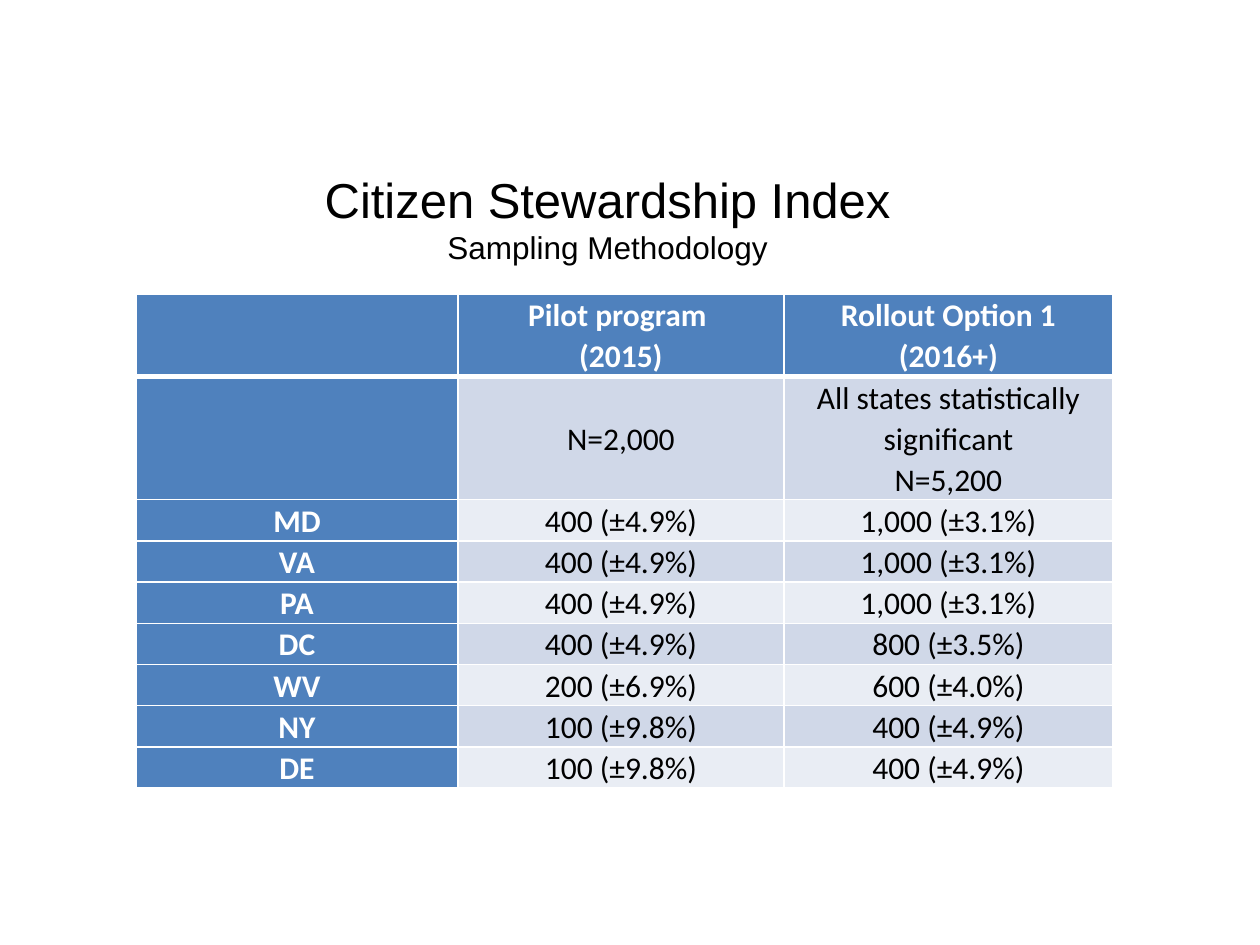
from pptx import Presentation
from pptx.dml.color import RGBColor
from pptx.enum.text import MSO_ANCHOR as Anchor, MSO_AUTO_SIZE as AutoSize, PP_ALIGN as Align
from pptx.oxml import parse_xml
from pptx.oxml.ns import nsdecls
from pptx.util import Pt

PX = 914400 // 126
COLORS = {
    "accent": "4F81BD",
    "dark band": "D0D8E8",
    "light band": "E9EDF4",
    "white": "FFFFFF",
    "black": "000000",
}
COLUMN_WIDTHS = [322, 326, 329]
ROW_HEIGHT = 39
SAMPLE_ROWS = [
    ["", "Pilot program \n(2015)", "Rollout Option 1 (2016+)"],
    ["", "N=2,000", "All states statistically significant\nN=5,200"],
    ["MD", "400 (±4.9%)", "1,000 (±3.1%)"],
    ["VA", "400 (±4.9%)", "1,000 (±3.1%)"],
    ["PA", "400 (±4.9%)", "1,000 (±3.1%)"],
    ["DC", "400 (±4.9%)", "800 (±3.5%)"],
    ["WV", "200 (±6.9%)", "600 (±4.0%)"],
    ["NY", "100 (±9.8%)", "400 (±4.9%)"],
    ["DE", "100 (±9.8%)", "400 (±4.9%)"],
]


def color(name):
    return RGBColor.from_string(COLORS[name])


def format_paragraph(paragraph, font_name, size, color_name, bold=False):
    paragraph.alignment = Align.CENTER
    font = paragraph.font
    font.name, font.size, font.bold = font_name, Pt(size), bold
    font.color.rgb = color(color_name)


def add_borders(cell, bottom_width):
    """Draw white cell edges, 1 pt wide except for the bottom one."""
    properties = cell._tc.get_or_add_tcPr()
    widths = {"lnL": 1, "lnR": 1, "lnT": 1, "lnB": bottom_width}
    for position, (edge, width) in enumerate(widths.items()):
        properties.insert(position, parse_xml(
            f'<a:{edge} {nsdecls("a")} w="{Pt(width)}"><a:solidFill>'
            f'<a:srgbClr val="{COLORS["white"]}"/></a:solidFill></a:{edge}>'))


def fill_cell(cell, text, row, column):
    is_heading = row == 0 or column == 0
    band = "dark band" if row % 2 else "light band"
    cell.fill.solid()
    cell.fill.fore_color.rgb = color("accent" if is_heading else band)
    cell.margin_left = cell.margin_right = 9 * PX
    cell.margin_top = cell.margin_bottom = 0
    cell.vertical_anchor = Anchor.TOP if column == 0 else Anchor.MIDDLE
    cell.text = text
    for paragraph in cell.text_frame.paragraphs:
        format_paragraph(paragraph, "Calibri", 18, "white" if is_heading else "black", is_heading)
        paragraph.line_spacing = 1.07
    add_borders(cell, 3 if row == 0 else 1)


def add_sample_table(slide, left, top, width, height):
    frame = slide.shapes.add_table(len(SAMPLE_ROWS), len(COLUMN_WIDTHS),
                                   left * PX, top * PX, width * PX, height * PX)
    table = frame.table
    for column, column_width in zip(table.columns, COLUMN_WIDTHS):
        column.width = column_width * PX
    for row in table.rows:
        row.height = ROW_HEIGHT * PX
    table.rows[1].height = 2 * ROW_HEIGHT * PX
    frame.height = height * PX
    for row, texts in enumerate(SAMPLE_ROWS):
        for column, text in enumerate(texts):
            fill_cell(table.cell(row, column), text, row, column)


def add_title(slide, left, top, width, height):
    text_frame = slide.shapes.add_textbox(left * PX, top * PX, width * PX, height * PX).text_frame
    text_frame.word_wrap = True
    text_frame.auto_size = AutoSize.SHAPE_TO_FIT_TEXT
    text_frame.text = "Citizen Stewardship Index\nSampling Methodology"
    for paragraph, size in zip(text_frame.paragraphs, (28, 18)):
        format_paragraph(paragraph, "Arial", size, "black")


def main():
    presentation = Presentation()
    presentation.slide_width, presentation.slide_height = 1260 * PX, 945 * PX
    slide = presentation.slides.add_slide(presentation.slide_layouts[6])
    add_sample_table(slide, 136, 294, sum(COLUMN_WIDTHS), 469)
    add_title(slide, 282, 163, 651, 111)
    presentation.save("out.pptx")


if __name__ == "__main__":
    main()
